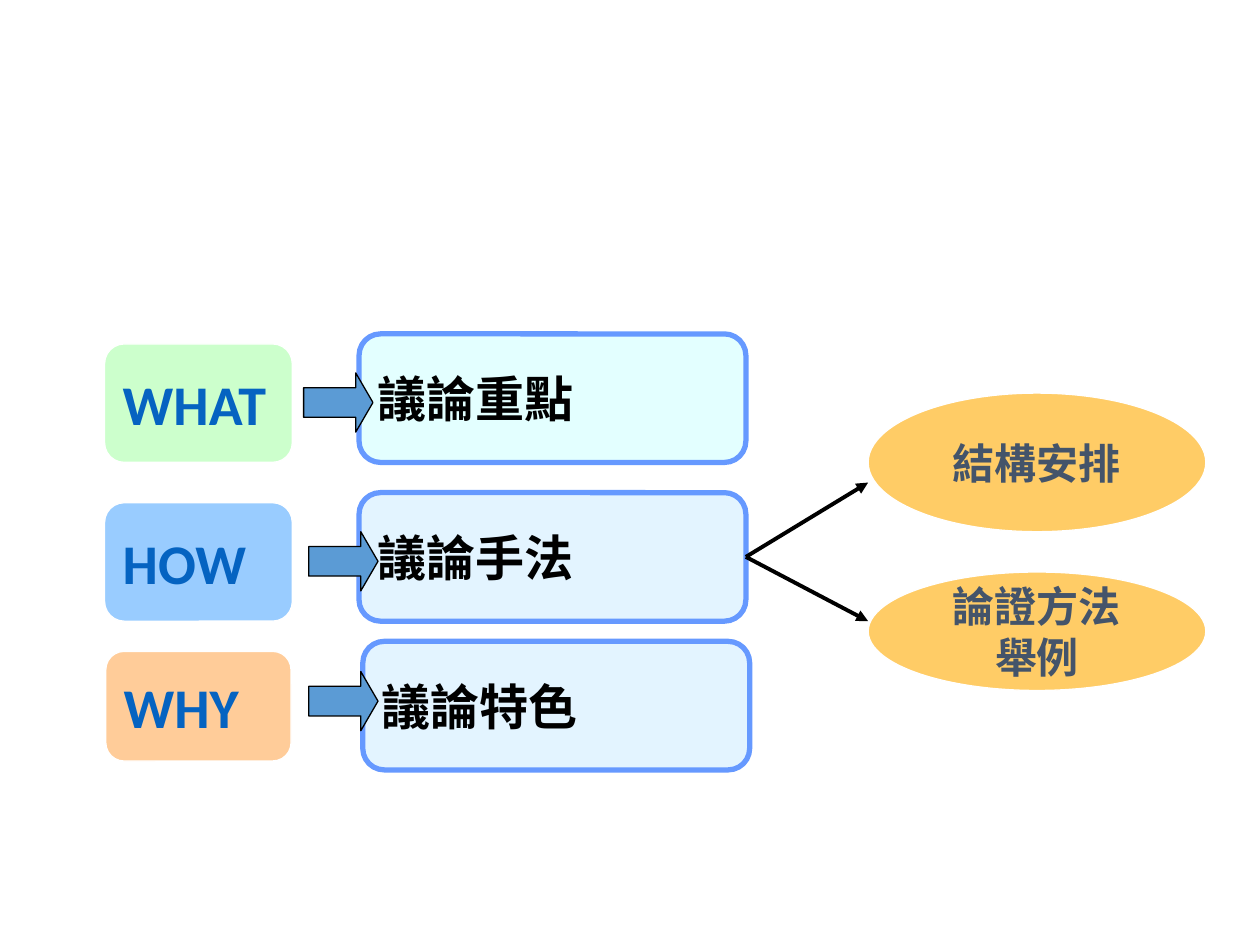
from lxml.etree import SubElement
from pptx import Presentation
from pptx.dml.color import RGBColor
from pptx.enum.shapes import MSO_CONNECTOR, MSO_SHAPE
from pptx.enum.text import MSO_ANCHOR, PP_ALIGN
from pptx.oxml.ns import qn
from pptx.util import Inches, Pt

COLORS = {
    "black": "000000", "white": "FFFFFF", "border": "6699FF", "arrow": "5B9BD5",
    "question": "0563C1", "method": "44546A", "gold": "FFCC66",
    "aqua": "CCFFFF", "sky": "CCECFF",
    "green": "CCFFCC", "blue": "99CCFF", "orange": "FFCC99",
}
LATIN, CJK = "Calibri", "Noto Sans CJK SC"


class Diagram:
    def __init__(self, slide):
        self.slide = slide

    def color(self, name):
        return RGBColor.from_string(COLORS[name])

    def shape(self, kind, box, fill, line, width):
        shape = self.slide.shapes.add_shape(kind, *map(Inches, box))
        shape.shadow.inherit = False
        shape.fill.solid()
        shape.fill.fore_color.rgb = self.color(fill)
        shape.line.color.rgb = self.color(line)
        shape.line.width = Pt(width)
        return shape

    def label(self, shape, text, size, color, font, align=PP_ALIGN.LEFT):
        frame = shape.text_frame
        frame.text = text
        frame.word_wrap = False
        frame.vertical_anchor = MSO_ANCHOR.MIDDLE
        for paragraph in frame.paragraphs:
            paragraph.alignment = align
            for run in paragraph.runs:
                run.font.size = Pt(size)
                run.font.bold = True
                run.font.name = font
                run.font.color.rgb = self.color(color)
                SubElement(run.font._element, qn("a:ea"), typeface=CJK)

    def question(self, text, box, fill):
        card = self.shape(MSO_SHAPE.ROUNDED_RECTANGLE, box, fill, "white", 0.75)
        self.label(card, text, 32, "question", LATIN)

    def topic(self, text, left, top, fill):
        panel = self.shape(MSO_SHAPE.ROUNDED_RECTANGLE, (left, top, 3.07, 1.02),
                           fill, "border", 3)
        tint = panel._element.spPr.find(qn("a:solidFill"))[0]
        SubElement(tint, qn("a:alpha"), val="55000")
        self.label(panel, text, 28, "black", CJK)
        return panel

    def arrow(self, left, top):
        arrow = self.shape(MSO_SHAPE.RIGHT_ARROW, (left, top, 0.55, 0.47),
                           "arrow", "black", 0.75)
        arrow.adjustments[1] = 0.29

    def method(self, text, top, height):
        oval = self.shape(MSO_SHAPE.OVAL, (6.89, top, 2.68, height),
                          "gold", "white", 0.75)
        self.label(oval, text, 24, "method", LATIN, PP_ALIGN.CENTER)

    def branch(self, source, x, y):
        branch = self.slide.shapes.add_connector(
            MSO_CONNECTOR.STRAIGHT, Inches(5.92), Inches(4.42), Inches(x), Inches(y))
        branch.begin_connect(source, 3)
        branch.line.color.rgb = self.color("black")
        branch.line.width = Pt(2.25)
        outline = branch._element.spPr.find(qn("a:ln"))
        SubElement(outline, qn("a:tailEnd"), type="triangle")
        SubElement(branch._element.spPr, qn("a:effectLst"))


def main():
    deck = Presentation()
    deck.slide_width, deck.slide_height = Inches(10), Inches(7.5)
    diagram = Diagram(deck.slides.add_slide(deck.slide_layouts[6]))

    rows = [
        ("WHAT", (0.83, 2.73, 1.49, 0.94), "green", 2.41, 2.96,
         "議論重點", 2.85, 2.65, "aqua"),
        ("HOW", (0.83, 3.99, 1.49, 0.94), "blue", 2.45, 4.22,
         "議論手法", 2.85, 3.91, "sky"),
        ("WHY", (0.84, 5.17, 1.47, 0.87), "orange", 2.45, 5.33,
         "議論特色", 2.88, 5.09, "sky"),
    ]
    topics = {}
    for question, box, fill, arrow_left, arrow_top, topic, left, top, tint in rows:
        topics[question] = diagram.topic(topic, left, top, tint)
        diagram.arrow(arrow_left, arrow_top)
        diagram.question(question, box, fill)

    for end_y in (3.83, 4.93):
        diagram.branch(topics["HOW"], 6.89, end_y)
    diagram.method("論證方法\n舉例", 4.54, 0.94)
    diagram.method("結構安排", 3.12, 1.1)

    deck.save("out.pptx")


if __name__ == "__main__":
    main()
